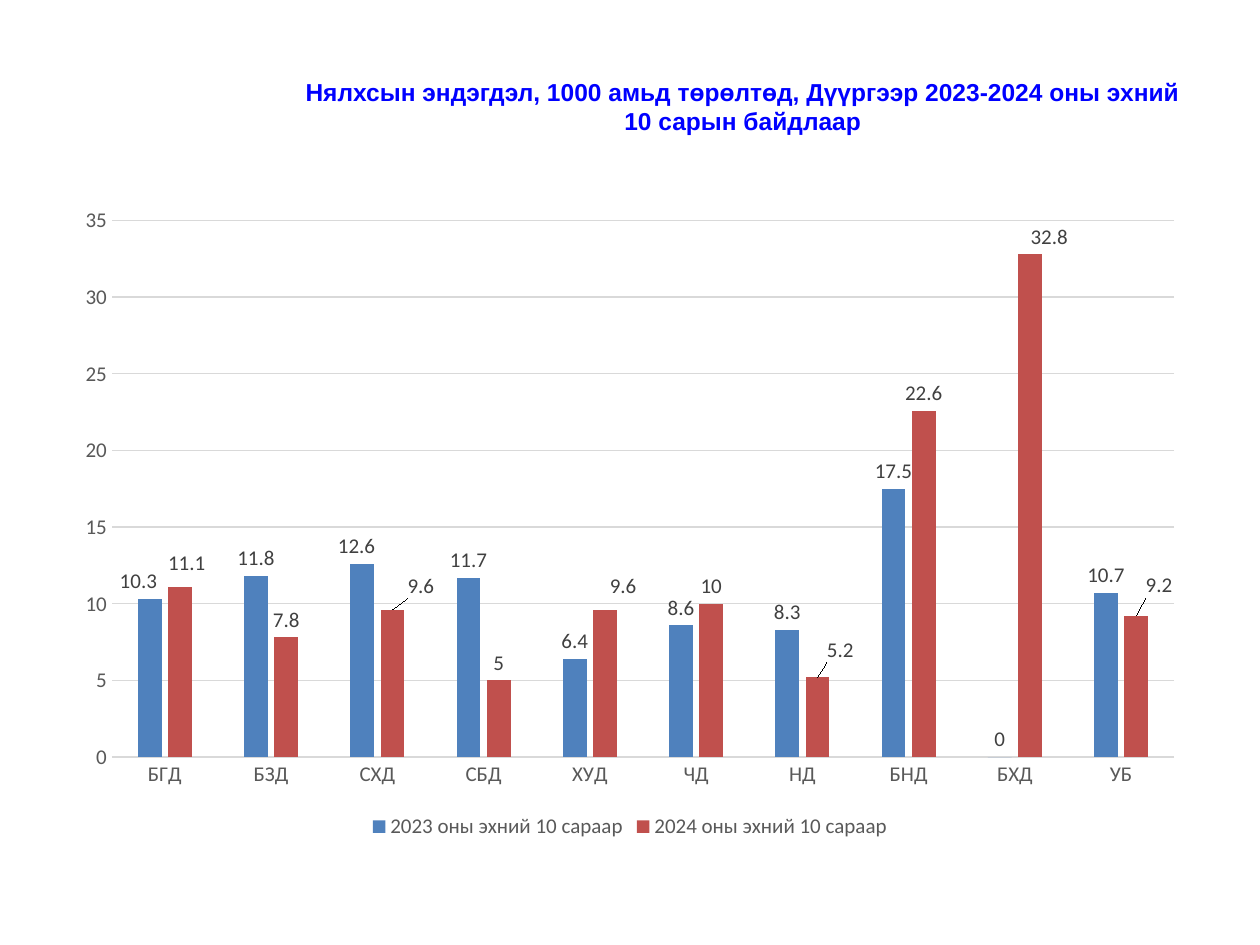
import pptx
import pptx.util
import pptx.dml.color
import pptx.chart.data
import pptx.enum.chart
import pptx.enum.text
import pptx.oxml.ns
from lxml import etree

Inches, Pt = pptx.util.Inches, pptx.util.Pt
enum = pptx.enum.chart
qn = pptx.oxml.ns.qn


def style(font, size, color, name="Calibri", bold=False):
    font.size, font.name, font.bold = Pt(size), name, bold
    font.color.rgb = pptx.dml.color.RGBColor.from_string(color)


def layout(**values):
    """Manual chart layout, in fractions of the chart."""
    node = etree.Element(qn("c:layout"))
    manual = etree.SubElement(node, qn("c:manualLayout"))
    for key, value in values.items():
        etree.SubElement(manual, qn("c:" + key)).set("val", str(value))
    return node


deck = pptx.Presentation()
deck.slide_width, deck.slide_height = Inches(10), Inches(7.5)
slide = deck.slides.add_slide(deck.slide_layouts[5])

# Title
title = slide.shapes.title
title.left, title.top = Inches(2.27), Inches(0.22)
title.width, title.height = Inches(7.25), Inches(1.25)
frame = title.text_frame
frame.text = ("Нялхсын эндэгдэл, 1000 амьд төрөлтөд, Дүүргээр "
              "2023-2024 оны эхний 10 сарын байдлаар")
frame.vertical_anchor = pptx.enum.text.MSO_ANCHOR.MIDDLE
para = frame.paragraphs[0]
para.alignment = pptx.enum.text.PP_ALIGN.CENTER
style(para.runs[0].font, 14, "0000FF", "Arial", True)

# Each series: name, colour, values, label shifts by point
rows = [
    ("2023 оны эхний 10 сараар", "4F81BD",
     [10.3, 11.8, 12.6, 11.7, 6.4, 8.6, 8.3, 17.5, 0, 10.7],
     {0: (-0.01, 0), 2: (-0.005, 0)}),
    ("2024 оны эхний 10 сараар", "C0504D",
     [11.1, 7.8, 9.6, 5, 9.6, 10, 5.2, 22.6, 32.8, 9.2],
     {0: (0.006, -0.01), 2: (0.025, -0.01), 4: (0.016, -0.01),
      6: (0.02, -0.015), 8: (0.017, 0), 9: (0.02, -0.02)}),
]
data = pptx.chart.data.CategoryChartData()
data.categories = ["БГД", "БЗД", "СХД", "СБД", "ХУД",
                   "ЧД", "НД", "БНД", "БХД", "УБ"]
for name, color, values, shifts in rows:
    data.add_series(name, values)

# Chart
chart = slide.shapes.add_chart(
    enum.XL_CHART_TYPE.COLUMN_CLUSTERED,
    Inches(0.5), Inches(1.55), Inches(9), Inches(5.15), data).chart
style(chart.font, 10, "000000")
chart.has_title = False
chart.has_legend = True
chart.legend.position = enum.XL_LEGEND_POSITION.BOTTOM
chart.legend.include_in_layout = False
style(chart.legend.font, 12, "595959")

# Plot area
plot = chart.plots[0]
plot.gap_width, plot.overlap = 219, -27
plot.vary_by_categories = False
area = chart._chartSpace.find(".//" + qn("c:plotArea"))
for old in area.findall(qn("c:layout")):
    area.remove(old)
area.insert(0, layout(layoutTarget="inner", xMode="edge", yMode="edge",
                      x=0.043, y=0.039, w=0.937, h=0.827))

# Axes
for axis in (chart.category_axis, chart.value_axis):
    axis.major_tick_mark = axis.minor_tick_mark = enum.XL_TICK_MARK.NONE
    style(axis.tick_labels.font, 12, "595959")
chart.value_axis.minimum_scale = 0
chart.value_axis.maximum_scale = 35
chart.value_axis.major_unit = 5
chart.value_axis.has_major_gridlines = True
chart.value_axis.format.line.fill.background()
for line in (chart.category_axis.format.line,
             chart.value_axis.major_gridlines.format.line):
    line.width = Pt(0.75)
    line.color.rgb = pptx.dml.color.RGBColor.from_string("D9D9D9")

# Bars and their labels
for bars, (name, color, values, shifts) in zip(plot.series, rows):
    bars.invert_if_negative = False
    bars.format.fill.solid()
    bars.format.fill.fore_color.rgb = pptx.dml.color.RGBColor.from_string(color)
    labels = bars.data_labels
    labels.show_value = True
    labels.position = enum.XL_LABEL_POSITION.OUTSIDE_END
    style(labels.font, 12, "404040")
    for point in shifts:
        label = bars.points[point].data_label
        label.position = enum.XL_LABEL_POSITION.OUTSIDE_END
        style(label.font, 12, "404040")
    for node in bars._element.iter(qn("c:dLbl")):
        x, y = shifts[int(node.find(qn("c:idx")).get("val"))]
        node.insert(1, layout(x=x, y=y))

deck.save("out.pptx")
